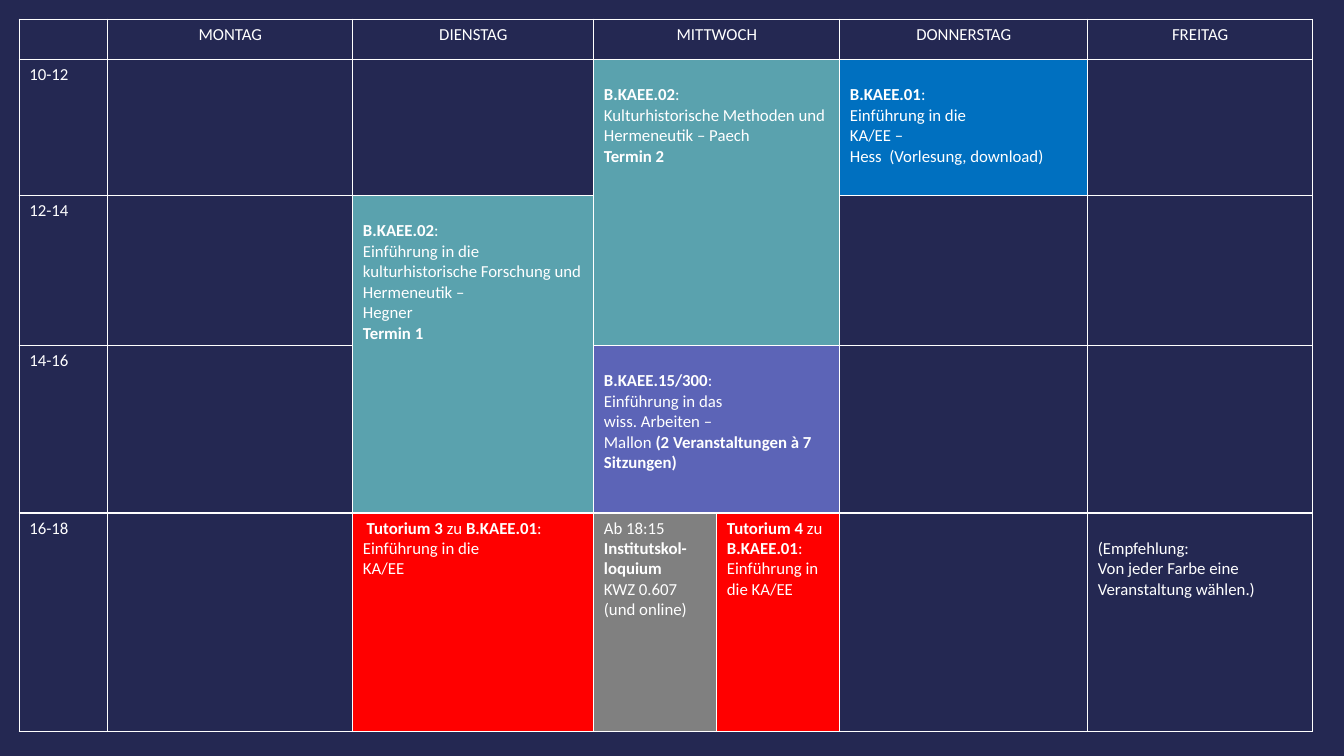
from pptx import Presentation, util as u
from pptx.dml.color import RGBColor
from pptx.enum import text
from pptx.oxml import parse_xml
from pptx.oxml.ns import nsdecls

THEME = {
    "ground": "242852", "white": "FFFFFF", "teal": "5AA2AE", "blue": "0070C0",
    "plum": "5C64B7", "red": "FF0000", "grey": "808080",
    "font": "Calibri", "size": u.Pt(12), "line": u.Pt(1),
}
COLS = [0.88, 2.43, 2.39, 1.22, 1.22, 2.46, 2.23]
ROWS = [0.4, 1.35, 1.49, 1.66, 2.17]
DAYS = {1: "MONTAG", 2: "DIENSTAG", 3: "MITTWOCH", 5: "DONNERSTAG", 6: "FREITAG"}
TIMES = ["10-12", "12-14", "14-16", "16-18"]
SPANS = [((0, 3), (0, 4)), ((1, 3), (2, 4)), ((2, 2), (3, 2)), ((3, 3), (3, 4))]
TOP, LOW = 0.05, 0.25

EVENTS = {
    (1, 3): ("teal", LOW, [
        "**B.KAEE.02**:",
        "Kulturhistorische Methoden und Hermeneutik – Paech",
        "**Termin 2**"]),
    (1, 5): ("blue", LOW, [
        "**B.KAEE.01**:", "Einführung in die", "KA/EE –",
        "Hess  (Vorlesung, download)"]),
    (2, 2): ("teal", LOW, [
        "**B.KAEE.02**:",
        "Einführung in die kulturhistorische Forschung und Hermeneutik –",
        "Hegner", "**Termin 1**"]),
    (3, 3): ("plum", LOW, [
        "**B.KAEE.15/300**:", "Einführung in das", "wiss. Arbeiten –",
        "Mallon **(2 Veranstaltungen à 7 Sitzungen)**"]),
    (4, 2): ("red", TOP, [
        "** Tutorium 3 **zu **B.KAEE.01**:", "Einführung in die", "KA/EE"]),
    (4, 3): ("grey", TOP, [
        "Ab 18:15", "**Institutskol-loquium**", "KWZ 0.607 (und online)"]),
    (4, 4): ("red", TOP, [
        "**Tutorium 4 **zu", "**B.KAEE.01**:", "Einführung in die KA/EE"]),
    (4, 6): (None, LOW, [
        "(Empfehlung:", "Von jeder Farbe eine Veranstaltung wählen.)"]),
}


def color(name):
    return RGBColor.from_string(THEME[name])


def write(cell, lines, align=text.PP_ALIGN.LEFT):
    frame = cell.text_frame
    for i, line in enumerate(lines):
        para = frame.add_paragraph() if i else frame.paragraphs[0]
        para.alignment = align
        for j, part in enumerate(line.split("**")):
            if part:
                run = para.add_run()
                run.text = part
                style = {"name": THEME["font"], "size": THEME["size"], "bold": j % 2 == 1}
                for key, val in style.items():
                    setattr(run.font, key, val)
                run.font.color.rgb = color("white")


deck = Presentation()
deck.slide_width, deck.slide_height = u.Inches(13.33), u.Inches(7.5)
slide = deck.slides.add_slide(deck.slide_layouts[6])
slide.background.fill.solid()
slide.background.fill.fore_color.rgb = color("ground")

table = slide.shapes.add_table(
    len(ROWS), len(COLS), u.Inches(0.19), u.Inches(0.19),
    u.Inches(sum(COLS)), u.Inches(sum(ROWS))).table
for key, val in {"first_row": False, "horz_banding": False}.items():
    setattr(table, key, val)
for col, width in zip(table.columns, COLS):
    col.width = u.Inches(width)
for row, height in zip(table.rows, ROWS):
    row.height = u.Inches(height)

for cell in table.iter_cells():
    cell.fill.background()
    cell.margin_top, cell.margin_bottom = u.Inches(TOP), 0
    props = cell._tc.get_or_add_tcPr()
    for i, side in enumerate("LRTB"):
        props.insert(i, parse_xml(
            f'<a:ln{side} {nsdecls("a")} w="{THEME["line"]}"><a:solidFill>'
            f'<a:srgbClr val="{THEME["white"]}"/></a:solidFill></a:ln{side}>'))

for start, end in SPANS:
    table.cell(*start).merge(table.cell(*end))
for col, day in DAYS.items():
    write(table.cell(0, col), [day], text.PP_ALIGN.CENTER)
for row, time in enumerate(TIMES, 1):
    write(table.cell(row, 0), [time])
for place, (tint, top, lines) in EVENTS.items():
    cell = table.cell(*place)
    cell.margin_top = u.Inches(top)
    if tint:
        cell.fill.solid()
        cell.fill.fore_color.rgb = color(tint)
    write(cell, lines)

deck.save("out.pptx")
